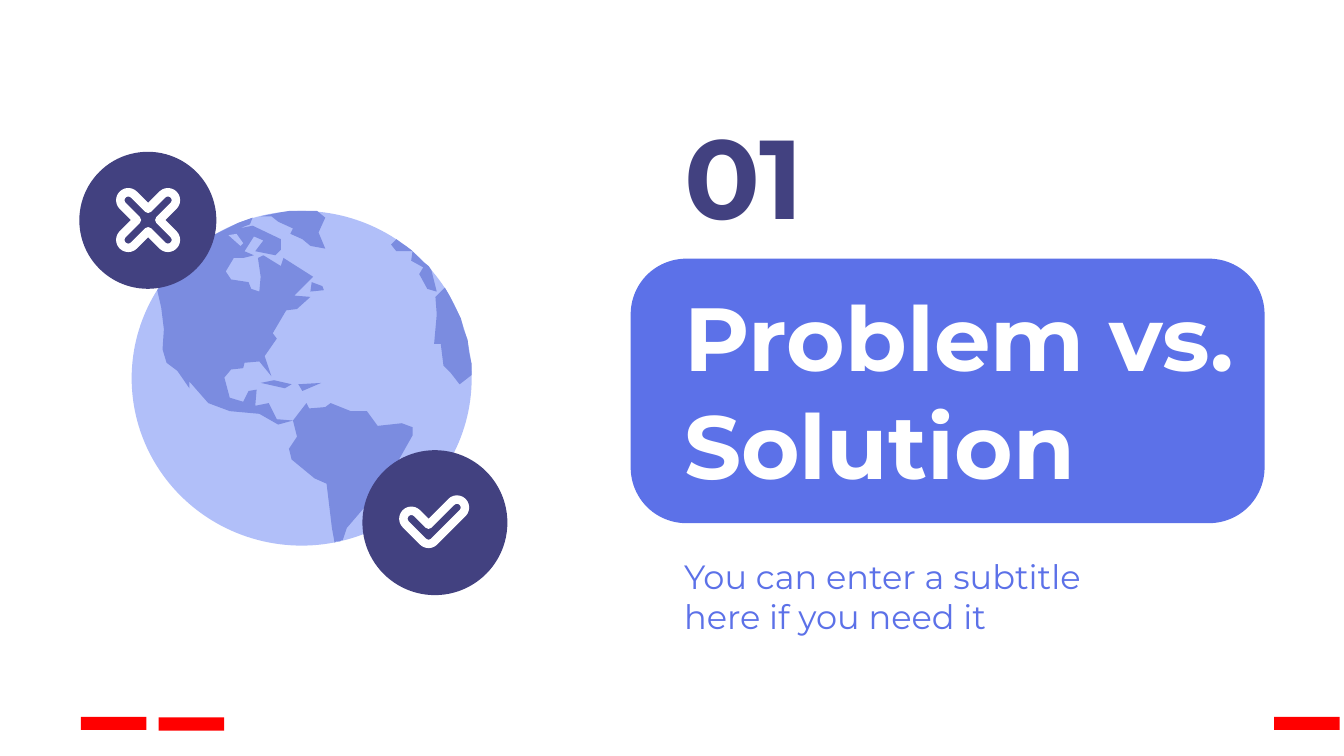
"""Builds a section slide with a globe, two badges and a title panel."""
from dataclasses import dataclass
from itertools import chain
from math import cos, radians, sin, sqrt

from pptx import Presentation, util as u
from pptx.dml.color import RGBColor
from pptx.enum import shapes, text

WHITE = RGBColor(0xFF, 0xFF, 0xFF)
RED = RGBColor(0xFF, 0x00, 0x00)
BLUE = RGBColor(0x5C, 0x71, 0xE8)
NAVY = RGBColor(0x42, 0x41, 0x80)
OCEAN = RGBColor(0xB1, 0xBF, 0xF9)
LAND = RGBColor(0x7B, 0x8C, 0xE0)
FONT = "Montserrat"
TEXT_LEFT = 12.68
TEXT_INSET = 0.25
MAP_UNIT = u.Cm(0.0254)
MARK_UNIT = u.Cm(0.001)
MARK_HALF_WIDTH = 150
GLOBE_CENTER = (224.5, 281.5)
GLOBE_RADII = (126.5, 124.5)
RIM_STEPS = 8

Point = tuple[float, float]


@dataclass(frozen=True)
class Block:
    left: float
    top: float
    width: float
    height: float
    color: RGBColor
    kind: shapes.MSO_SHAPE = shapes.MSO_SHAPE.RECTANGLE


@dataclass(frozen=True)
class Label:
    top: float
    width: float
    height: float
    words: str
    size: int
    color: RGBColor
    bold: bool = True
    space_after: int = 0


@dataclass(frozen=True)
class Land:
    """Coasts in drawing order, closed along the globe's rim between two angles."""
    coasts: tuple[tuple[Point, ...], ...]
    rim: tuple[float, float] | None = None


@dataclass(frozen=True)
class Arm:
    angle: int
    reach: int
    sweep: int = 90
    notch: bool = False


@dataclass(frozen=True)
class Badge:
    left: float
    top: float
    size: float
    mark_center: Point
    arms: tuple[Arm, ...]


PANEL = Block(11.92, 4.89, 11.98, 5, BLUE, shapes.MSO_SHAPE.ROUNDED_RECTANGLE)
BARS = [Block(left, top, 1.24, 0.25, RED)
        for left, top in ((1.53, 13.55), (3, 13.56), (24.08, 13.55))]
LABELS = [
    Label(4.42, 10.97, 5.89, "Problem vs. Solution", 48, WHITE),
    Label(2.36, 3.45, 1.88, "01", 60, NAVY),
    Label(10.58, 8.38, 1.37, "You can enter a subtitle here if you need it", 18, BLUE, False, 16),
]
CHECK = (Arm(-45, 760), Arm(90, 0, 45), Arm(225, 460, notch=True))
CROSS = tuple(Arm(angle, 530, notch=True) for angle in range(45, 360, 90))
BADGES = [Badge(6.85, 8.51, 2.74, (8100, 10130), CHECK),
          Badge(1.5, 2.87, 2.59, (2800, 4160), CROSS)]

ARCTIC_COAST = ((186, 167), (178, 170), (188, 168), (209, 178), (209, 186), (205, 190),
                (190, 187), (196, 179), (189, 176), (182, 187), (189, 190))
HUDSON_BAY = ((181, 192), (174, 192), (168, 202), (172, 208), (185, 210), (187, 215),
              (193, 217), (194, 206), (192, 192))
LABRADOR = ((196, 190), (209, 198), (211, 192), (233, 206), (219, 220), (231, 221))
ATLANTIC_COAST = ((221, 230), (213, 231), (203, 248), (206, 252), (197, 265), (202, 280),
                  (193, 269), (182, 270))
GULF = ((181, 274), (172, 275), (167, 281), (171, 296), (181, 299), (185, 291),
        (191, 290), (190, 302), (200, 300), (206, 312), (218, 313))
PACIFIC_COAST = ((207, 316), (193, 308), (171, 306), (155, 300), (141, 284), (141, 289),
                 (132, 276), (124, 270), (121, 260), (122, 245), (120, 229))
CARIBBEAN_COAST = ((246, 300), (242, 303), (230, 304), (228, 300), (218, 313))
ANDES_COAST = ((221, 325), (215, 334), (217, 342), (234, 356), (243, 360), (247, 393))
BRAZIL_COAST = ((258, 393), (270, 379), (278, 373), (289, 356), (307, 324), (307, 318),
                (299, 315), (281, 317), (273, 306), (261, 306))
AFRICA_COAST = ((351, 279), (342, 286), (335, 277), (330, 272), (328, 256), (323, 256),
                (325, 234), (324, 221))
GREENLAND_COAST = ((242, 162), (237, 173), (242, 185), (231, 183), (225, 178), (216, 174),
                   (218, 170), (207, 165), (202, 161))
IBERIA_COAST = ((325, 217), (318, 215), (312, 204), (315, 199), (306, 194), (307, 187),
                (295, 187), (291, 182))
CUBA = ((204, 283), (194, 285), (212, 289), (217, 286))
HISPANIOLA = ((239, 285), (222, 286), (225, 291))
NEWFOUNDLAND = ((232, 210), (231, 217), (241, 216), (240, 213))
ARCTIC_LAKE = ((176, 174), (181, 181), (179, 183), (170, 175))

LANDS = [
    Land((ARCTIC_COAST, HUDSON_BAY, LABRADOR, ATLANTIC_COAST, GULF, PACIFIC_COAST), (212, 253)),
    Land((CARIBBEAN_COAST, ANDES_COAST), (79, 76)),
    Land((AFRICA_COAST,), (327, 359)),
    Land((GREENLAND_COAST,), (256, 275)),
    Land((IBERIA_COAST,), (304, 320)),
    *(Land((island,)) for island in (CUBA, HISPANIOLA, NEWFOUNDLAND)),
]
LANDS[1] = Land((BRAZIL_COAST, CARIBBEAN_COAST, ANDES_COAST), (79, 76))


def paint(shape, color: RGBColor) -> None:
    """Give a shape a flat fill without outline or shadow."""
    shape.shadow.inherit = False
    shape.fill.solid()
    shape.fill.fore_color.rgb = color
    shape.line.fill.background()


def draw_block(page, block: Block):
    """Add a preset shape."""
    shape = page.shapes.add_shape(block.kind, u.Cm(block.left), u.Cm(block.top),
                                  u.Cm(block.width), u.Cm(block.height))
    paint(shape, block.color)
    return shape


def draw_outline(page, points: list[Point], unit: int, color: RGBColor):
    """Add a closed freeform."""
    builder = page.shapes.build_freeform(*points[0], scale=unit)
    builder.add_line_segments(points[1:], close=True)
    shape = builder.convert_to_shape()
    paint(shape, color)
    return shape


def polar(center: Point, angle: float, radii: Point) -> Point:
    """Return the point at an angle on an ellipse."""
    return (center[0] + radii[0] * cos(radians(angle)),
            center[1] + radii[1] * sin(radians(angle)))


def land_outline(land: Land) -> list[Point]:
    """Join the rim arc and the coasts of a land."""
    rim = []
    if land.rim:
        start, end = land.rim
        rim = [polar(GLOBE_CENTER, start + (end - start) * step / RIM_STEPS, GLOBE_RADII)
               for step in range(RIM_STEPS + 1)]
    return [*rim, *chain.from_iterable(land.coasts)]


def draw_globe(page) -> None:
    """Add the ocean disc and the lands on it."""
    left, top = (center - radius for center, radius in zip(GLOBE_CENTER, GLOBE_RADII))
    width, height = (2 * radius for radius in GLOBE_RADII)
    sides = (MAP_UNIT.cm * side for side in (left, top, width, height))
    draw_block(page, Block(*sides, OCEAN, shapes.MSO_SHAPE.OVAL))
    for land in LANDS:
        draw_outline(page, land_outline(land), MAP_UNIT, LAND)
    draw_outline(page, ARCTIC_LAKE, MAP_UNIT, OCEAN)


def mark_outline(center: Point, arms: tuple[Arm, ...]) -> list[Point]:
    """Trace round-ended arms that meet at a center."""
    points = []
    for arm in arms:
        tip = polar(center, arm.angle, (arm.reach, arm.reach))
        points += [polar(tip, arm.angle + turn, (MARK_HALF_WIDTH, MARK_HALF_WIDTH))
                   for turn in range(-arm.sweep, arm.sweep + 1, 15)]
        if arm.notch:
            depth = MARK_HALF_WIDTH * sqrt(2)
            points.append(polar(center, arm.angle + 45, (depth, depth)))
    return points


def draw_badge(page, badge: Badge) -> None:
    """Add a round badge with an outlined mark."""
    draw_block(page, Block(badge.left, badge.top, badge.size, badge.size, NAVY,
                           shapes.MSO_SHAPE.OVAL))
    mark = draw_outline(page, mark_outline(badge.mark_center, badge.arms), MARK_UNIT, NAVY)
    mark.line.color.rgb, mark.line.width = WHITE, u.Cm(0.16)


def draw_label(page, label: Label) -> None:
    """Add a wrapped, vertically centered text box."""
    box = page.shapes.add_textbox(u.Cm(TEXT_LEFT), u.Cm(label.top),
                                  u.Cm(label.width), u.Cm(label.height))
    frame = box.text_frame
    frame.word_wrap = True
    frame.vertical_anchor = text.MSO_ANCHOR.MIDDLE
    for side in ("left", "right", "top", "bottom"):
        setattr(frame, f"margin_{side}", u.Cm(TEXT_INSET))
    frame.text = label.words
    para = frame.paragraphs[0]
    para.space_after = u.Pt(label.space_after)
    font = para.runs[0].font
    font.name, font.size, font.bold = FONT, u.Pt(label.size), label.bold
    font.color.rgb = label.color


def main() -> None:
    """Build and save the deck."""
    deck = Presentation()
    deck.slide_width, deck.slide_height = u.Cm(25.4), u.Cm(14.29)
    page = deck.slides.add_slide(deck.slide_layouts[6])
    draw_block(page, PANEL).adjustments[0] = 0.21
    for bar in BARS:
        draw_block(page, bar)
    for label in LABELS:
        draw_label(page, label)
    draw_globe(page)
    for badge in BADGES:
        draw_badge(page, badge)
    deck.save("out.pptx")


if __name__ == "__main__":
    main()
